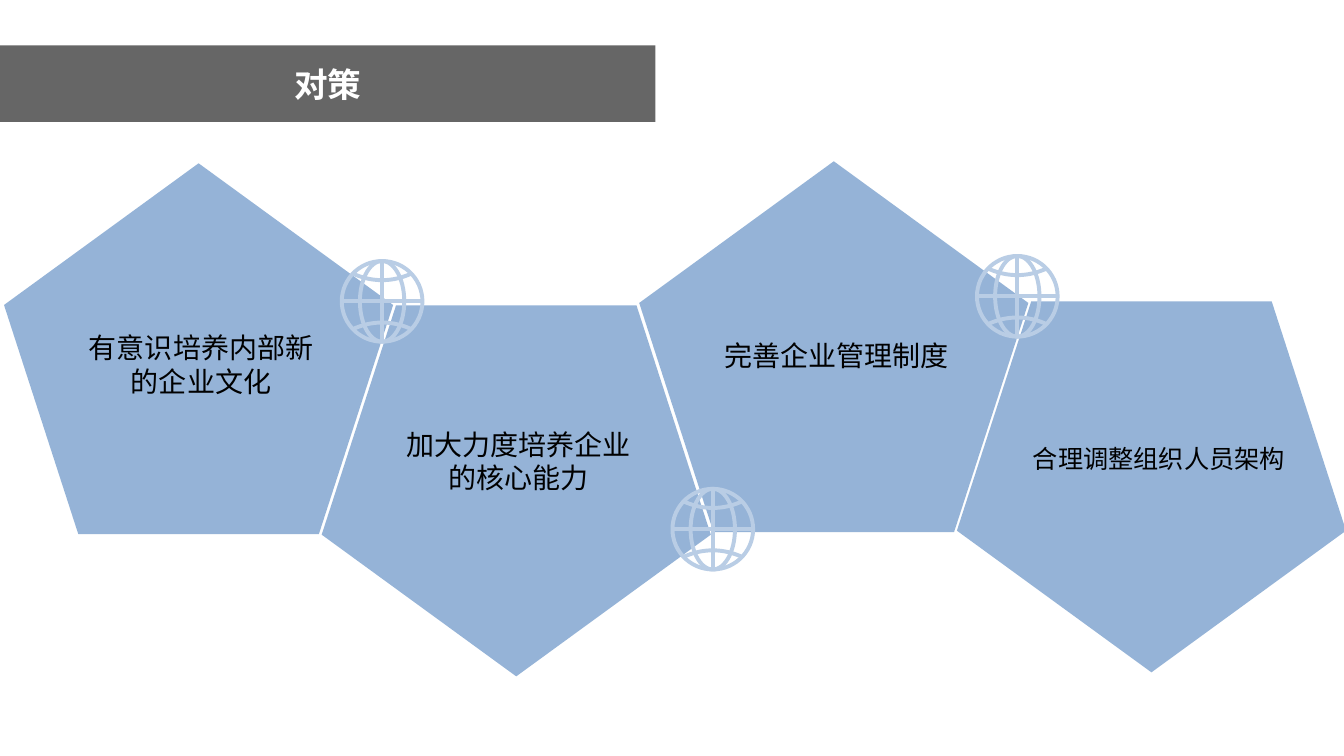
import math
import lxml.etree
import pptx
import pptx.util
import pptx.dml.color
import pptx.enum.shapes
import pptx.enum.text
import pptx.oxml.ns

Inches = pptx.util.Inches
RGBColor = pptx.dml.color.RGBColor
qn = pptx.oxml.ns.qn

BLACK = RGBColor(0x00, 0x00, 0x00)
WHITE = RGBColor(0xFF, 0xFF, 0xFF)
BLUE = RGBColor(0x4F, 0x81, 0xBD)
PALE_BLUE = RGBColor(0xB9, 0xCD, 0xE5)
FONT = "Noto Sans CJK SC"


def fill_translucent(shape, color):
    shape.fill.solid()
    shape.fill.fore_color.rgb = color
    color_element = shape._element.spPr.find(qn("a:solidFill"))[0]
    lxml.etree.SubElement(color_element, qn("a:alpha"), val="60000")
    shape.line.fill.background()


def write_text(shape, text, size, color, bold=False):
    paragraph = shape.text_frame.paragraphs[0]
    paragraph.text = text
    paragraph.alignment = pptx.enum.text.PP_ALIGN.CENTER
    paragraph.font.name = FONT
    paragraph.font.size = pptx.util.Pt(size)
    paragraph.font.bold = bold
    paragraph.font.color.rgb = color
    properties = paragraph._p.pPr.find(qn("a:defRPr"))
    lxml.etree.SubElement(properties, qn("a:ea"), typeface=FONT)


presentation = pptx.Presentation()
presentation.slide_width = Inches(13.33)
presentation.slide_height = Inches(7.5)
slide = presentation.slides.add_slide(presentation.slide_layouts[5])

title = slide.shapes.title
title.left, title.top = Inches(0), Inches(0.45)
title.width, title.height = Inches(6.5), Inches(0.76)
title.text_frame.vertical_anchor = pptx.enum.text.MSO_ANCHOR.MIDDLE
fill_translucent(title, BLACK)
write_text(title, "对策", 24, WHITE, bold=True)

pentagons = [(0.04, 1.62, 0), (3.19, 3.03, 180), (6.34, 1.6, 0), (9.49, 2.99, 180)]
for left, top, rotation in pentagons:
    pentagon = slide.shapes.add_shape(
        pptx.enum.shapes.MSO_SHAPE.REGULAR_PENTAGON,
        Inches(left), Inches(top), Inches(3.86), Inches(3.68))
    pentagon.rotation = rotation
    pentagon.shadow.inherit = False
    fill_translucent(pentagon, BLUE)

radius = 0.4
angles = [math.radians(degrees) for degrees in range(0, 361, 6)]
steps = [step / 10 for step in range(-10, 11)]
globe_strokes = [
    [(radius * math.cos(angle), radius * math.sin(angle)) for angle in angles],
    [(0.22 * math.cos(angle), radius * math.sin(angle)) for angle in angles],
    [(-radius, 0), (radius, 0)],
    [(0, -radius), (0, radius)],
]
for side in (-1, 1):
    globe_strokes.append(
        [(0.29 * step, side * (0.21 + 0.065 * step ** 2)) for step in steps])

for center_x, center_y in [(3.79, 2.99), (7.07, 5.25), (10.09, 2.94)]:
    builder = slide.shapes.build_freeform(
        Inches(center_x + radius), Inches(center_y))
    for stroke in globe_strokes:
        points = [(Inches(center_x + x), Inches(center_y + y)) for x, y in stroke]
        builder.move_to(*points[0])
        builder.add_line_segments(points[1:], close=False)
    globe = builder.convert_to_shape()
    globe.shadow.inherit = False
    globe.fill.background()
    globe.line.color.rgb = PALE_BLUE
    globe.line.width = pptx.util.Pt(2.8)

measures = [
    ("有意识培养内部新的企业文化", 0.68, 3.23, 2.63, 1.45, 20, True),
    ("加大力度培养企业的核心能力", 3.84, 4.19, 2.6, 0.77, 20, True),
    ("完善企业管理制度", 6.81, 3.31, 2.98, 0.44, 20, True),
    ("合理调整组织人员架构", 10.13, 4.35, 2.73, 0.4, 18, False),
]
for text, left, top, width, height, size, wrap in measures:
    text_box = slide.shapes.add_textbox(
        Inches(left), Inches(top), Inches(width), Inches(height))
    text_box.text_frame.word_wrap = wrap
    write_text(text_box, text, size, BLACK)

presentation.save("out.pptx")
